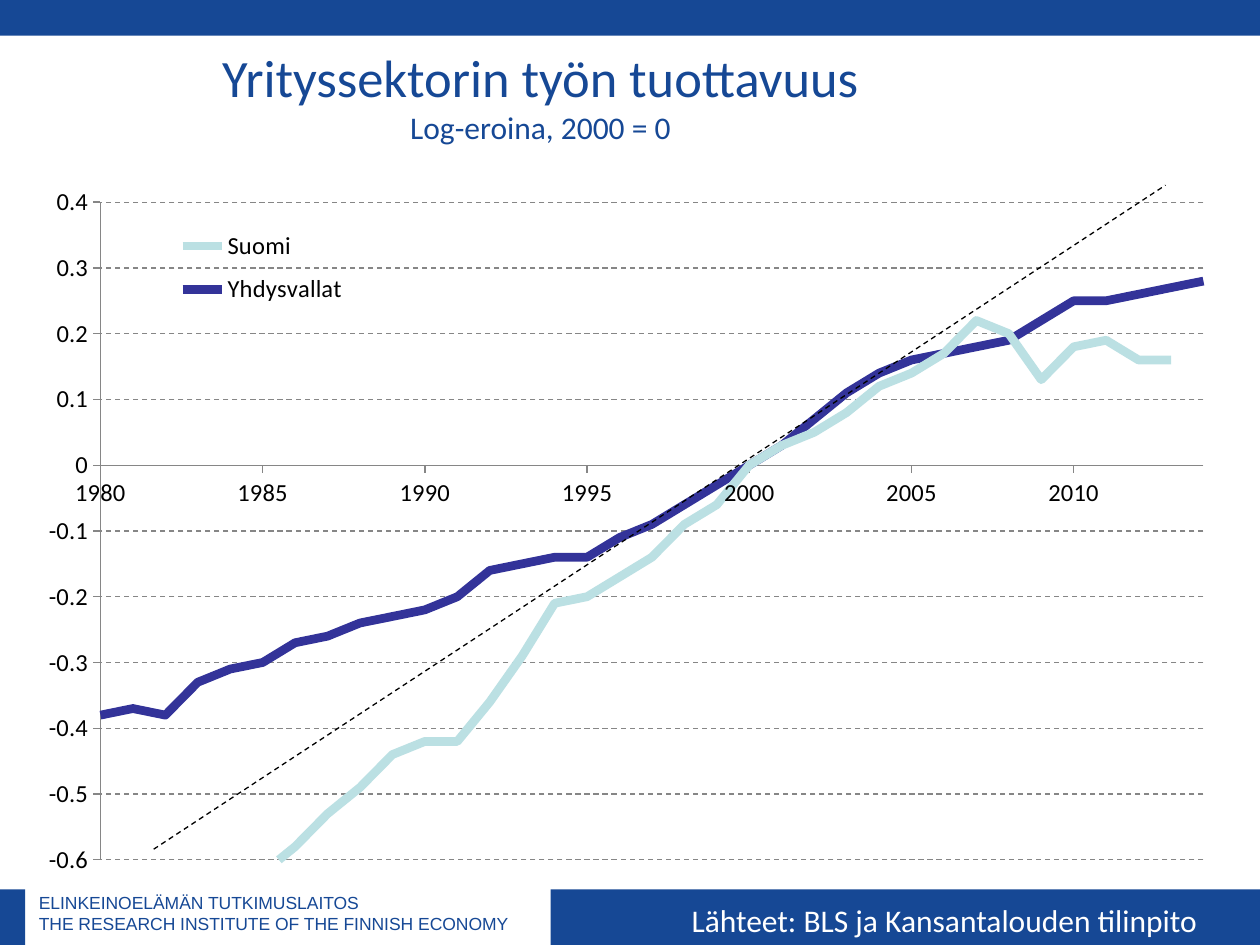
from lxml.etree import SubElement
from pptx import Presentation
from pptx.chart.data import XyChartData
from pptx.dml.color import RGBColor
from pptx.enum.chart import XL_CHART_TYPE, XL_LEGEND_POSITION, XL_TICK_MARK
from pptx.enum.dml import MSO_LINE
from pptx.enum.shapes import MSO_CONNECTOR, MSO_SHAPE
from pptx.enum.text import MSO_ANCHOR, MSO_AUTO_SIZE, PP_ALIGN
from pptx.oxml import parse_xml
from pptx.oxml.ns import nsdecls, qn
from pptx.util import Pt

COLORS = {"blue": "164895", "white": "FFFFFF", "black": "000000", "grey": "868686",
          "Suomi": "BBE0E3", "Yhdysvallat": "333399"}
TITLE = [("Yrityssektorin työn tuottavuus\v", 30), ("Log-eroina, 2000 = 0", 18)]
INSTITUTE = ["ELINKEINOELÄMÄN TUTKIMUSLAITOS",
             "THE RESEARCH INSTITUTE OF THE FINNISH ECONOMY"]
SOURCES = "Lähteet: BLS ja Kansantalouden tilinpito"
BANDS = [(314.64, 508.32, 405.36, 31.68), (0, 0, 720, 20.4), (0, 508.32, 14.4, 31.68)]
FIRST_YEAR = 1975
PRODUCTIVITY = {
    "Suomi": [None, -0.94, -0.91, -0.86, -0.8, -0.77, -0.76, -0.73, -0.7, -0.66,
              -0.62, -0.58, -0.53, -0.49, -0.44, -0.42, -0.42, -0.36, -0.29, -0.21,
              -0.2, -0.17, -0.14, -0.09, -0.06, 0, 0.03, 0.05, 0.08, 0.12,
              0.14, 0.17, 0.22, 0.2, 0.13, 0.18, 0.19, 0.16, 0.16, None],
    "Yhdysvallat": [-0.44, -0.41, -0.39, -0.38, -0.38, -0.38, -0.37, -0.38, -0.33, -0.31,
                    -0.3, -0.27, -0.26, -0.24, -0.23, -0.22, -0.2, -0.16, -0.15, -0.14,
                    -0.14, -0.11, -0.09, -0.06, -0.03, 0, 0.03, 0.07, 0.11, 0.14,
                    0.16, 0.17, 0.18, 0.19, 0.22, 0.25, 0.25, 0.26, 0.27, 0.28],
}


def color(name):
    return RGBColor.from_string(COLORS[name])


def place(shape, left, top, width, height):
    shape.left, shape.top, shape.width, shape.height = map(Pt, (left, top, width, height))


def write(shape, paragraphs, font="Calibri", ink="blue", align=PP_ALIGN.LEFT,
          anchor=MSO_ANCHOR.TOP, wrap=True):
    frame = shape.text_frame
    frame.auto_size = MSO_AUTO_SIZE.NONE
    frame.word_wrap = wrap
    frame.vertical_anchor = anchor
    for index, parts in enumerate(paragraphs):
        paragraph = frame.add_paragraph() if index else frame.paragraphs[0]
        paragraph.alignment = align
        for text, size in parts:
            run = paragraph.add_run()
            run.text = text.rstrip("\v")
            run.font.name, run.font.size = font, Pt(size)
            run.font.color.rgb = color(ink)
            if text.endswith("\v"):
                paragraph.add_line_break()


def set_layout(parent, after, x, y, w, h, inner=False):
    for old in parent.findall(qn("c:layout")):
        parent.remove(old)
    layout = parse_xml(f"<c:layout {nsdecls('c')}><c:manualLayout/></c:layout>")
    settings = [("layoutTarget", "inner")] if inner else []
    settings += [("xMode", "edge"), ("yMode", "edge"), ("x", x), ("y", y), ("w", w), ("h", h)]
    for tag, value in settings:
        SubElement(layout[0], qn(f"c:{tag}")).set("val", str(value))
    if after is None:
        parent.insert(0, layout)
    else:
        after.addnext(layout)


def format_axis(axis, low, high, step):
    axis.minimum_scale, axis.maximum_scale, axis.major_unit = low, high, step
    axis.major_tick_mark, axis.minor_tick_mark = XL_TICK_MARK.OUTSIDE, XL_TICK_MARK.NONE
    axis.has_major_gridlines = False
    axis.format.line.color.rgb = color("grey")
    axis.format.line.width = Pt(0.75)
    axis.tick_labels.number_format = "General"
    axis.tick_labels.number_format_is_linked = False


def add_productivity_chart(slide):
    data = XyChartData()
    for country, values in PRODUCTIVITY.items():
        points = data.add_series(country)
        for year, value in enumerate(values, FIRST_YEAR):
            points.add_data_point(year, value)
    chart = slide.shapes.add_chart(
        XL_CHART_TYPE.XY_SCATTER_LINES_NO_MARKERS,
        Pt(2.88), Pt(100.08), Pt(717.12), Pt(406.8), data).chart
    for point in list(chart.element.iter(qn("c:pt"))):
        if point.findtext(qn("c:v")) in ("None", ""):
            point.getparent().remove(point)
    chart.has_title = False
    chart.font.name, chart.font.size = "Calibri", Pt(14)
    chart.font.color.rgb = color("black")
    chart.plots[0].vary_by_categories = False
    for country in chart.plots[0].series:
        country.smooth = False
        country.format.line.width = Pt(5)
        country.format.line.color.rgb = color(country.name)
    format_axis(chart.category_axis, 1980, 2014, 5)
    step = 0.1
    format_axis(chart.value_axis, -6 * step, 4 * step, step)
    chart.value_axis.has_major_gridlines = True
    grid = chart.value_axis.major_gridlines.format.line
    grid.color.rgb = color("grey")
    grid.width = Pt(0.75)
    grid.dash_style = MSO_LINE.DASH
    chart.has_legend = True
    chart.legend.position = XL_LEGEND_POSITION.RIGHT
    chart.legend.include_in_layout = False
    legend = chart.element.find(".//" + qn("c:legend"))
    set_layout(legend, legend.find(qn("c:legendPos")), 0.13, 0.06, 0.15, 0.14)
    plot_area = chart.element.find(".//" + qn("c:plotArea"))
    set_layout(plot_area, None, 0.076, 0.038, 0.879, 0.924, inner=True)


def main():
    deck = Presentation()
    deck.slide_width, deck.slide_height = Pt(720), Pt(540)
    slide = deck.slides.add_slide(deck.slide_layouts[5])
    shapes = slide.shapes

    for bounds in BANDS:
        band = shapes.add_shape(MSO_SHAPE.RECTANGLE, *map(Pt, bounds))
        band.shadow.inherit = False
        band.fill.solid()
        band.fill.fore_color.rgb = color("blue")
        band.line.fill.background()

    institute = shapes.add_textbox(Pt(15.12), Pt(506.16), Pt(300.24), Pt(30.96))
    write(institute, [[(line, 10)] for line in INSTITUTE], font="Arial")

    place(shapes.title, -8.64, 20.88, 635.04, 67.68)
    write(shapes.title, [TITLE], align=PP_ALIGN.CENTER, anchor=MSO_ANCHOR.MIDDLE)

    add_productivity_chart(slide)

    trend = shapes.add_connector(MSO_CONNECTOR.STRAIGHT,
                                 Pt(87.84), Pt(485.28), Pt(666), Pt(105.84))
    trend.line.color.rgb = color("black")
    trend.line.width = Pt(0.75)
    trend.line.dash_style = MSO_LINE.DASH
    SubElement(trend.element.spPr, qn("a:effectLst"))

    sources = shapes.add_textbox(Pt(388.08), Pt(511.2), Pt(325.44), Pt(28.8))
    write(sources, [[(SOURCES, 18)]], ink="white", wrap=False)

    deck.save("out.pptx")


if __name__ == "__main__":
    main()
